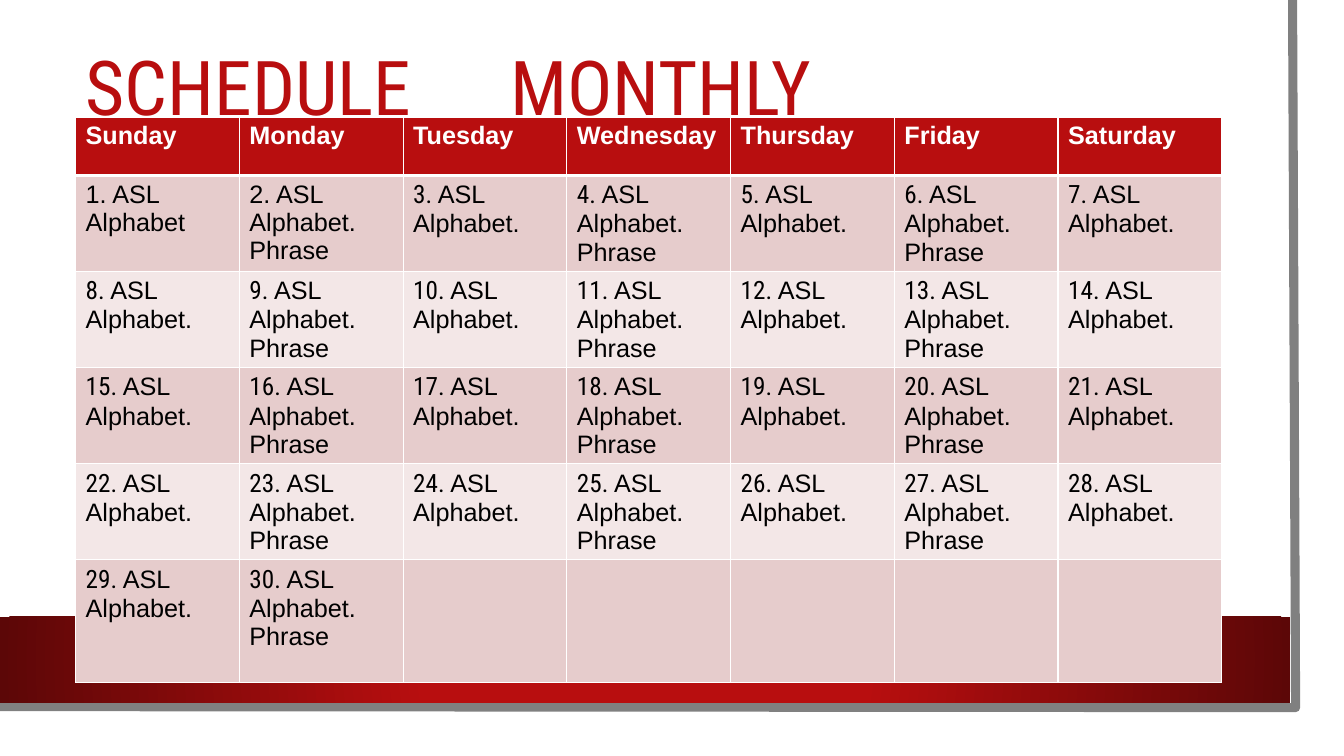
from lxml.etree import SubElement
from pptx import Presentation
from pptx.dml.color import RGBColor
from pptx.enum.shapes import MSO_SHAPE
from pptx.enum.text import MSO_ANCHOR, MSO_AUTO_SIZE, PP_ALIGN
from pptx.oxml import parse_xml
from pptx.oxml.ns import nsdecls, qn
from pptx.util import Inches, Pt

WIDTH, HEIGHT = Inches(13.33), Inches(7.5)
RED, DARK_RED, GREY, WHITE, BLACK = "B80E0F", "5C0707", "808080", "FFFFFF", "000000"
BANDS = ("E6CCCC", "F3E7E7")
SANS, CONDENSED = "Arial", "Roboto Condensed"
DAYS = ("Sunday", "Monday", "Tuesday", "Wednesday", "Thursday", "Friday", "Saturday")
WEEKS, LAST_DAY = 5, 30
PHRASE_COLUMNS = (1, 3, 5)
PHRASE_BELOW = (2, 9, 16)
TABLE_LEFT, TABLE_WIDTH = Inches(0.75), Inches(11.37)
ROW_HEIGHTS = [0.58] + [0.94] * (WEEKS - 1) + [1.22]


def color(value):
    """Turn a hex string into a colour."""
    return RGBColor.from_string(value)


def add_run(p, text, size, font, ink, bold=False):
    """Add one formatted run to a paragraph."""
    r = p.add_run()
    r.text = text
    r.font.size, r.font.name, r.font.bold = Pt(size), font, bold
    r.font.color.rgb = color(ink)


def add_page_edge(s):
    """Draw the grey edge along the right and bottom of the page."""
    edge = s.shapes.build_freeform(Inches(12.82), 0)
    corners = [(12.85, 7.02), (-0.03, 7.01)]
    edge.add_line_segments([(Inches(x), Inches(y)) for x, y in corners], close=False)
    sp = edge.convert_to_shape()
    sp.shadow.inherit = False
    sp.fill.background()
    sp.line.color.rgb = color(GREY)
    sp.line.width = Pt(6.5)


def add_band(s):
    """Draw the red band with its radial gradient."""
    sp = s.shapes.add_shape(MSO_SHAPE.RECTANGLE, 0, Inches(6.12), Inches(12.8), Inches(0.85))
    sp.shadow.inherit = False
    sp.line.fill.background()
    gradient = parse_xml(
        f'<a:gradFill {nsdecls("a")} rotWithShape="1"><a:gsLst>'
        f'<a:gs pos="34000"><a:srgbClr val="{RED}"/></a:gs>'
        f'<a:gs pos="100000"><a:srgbClr val="{DARK_RED}"/></a:gs></a:gsLst>'
        '<a:path path="circle"><a:fillToRect l="50000" t="50000" r="50000" b="50000"/>'
        '</a:path></a:gradFill>')
    sp.element.spPr.find(qn("a:prstGeom")).addnext(gradient)


def add_title(s):
    """Fill the title placeholder, with a tab between its two words."""
    sp = s.shapes.title
    sp.left, sp.top, sp.width, sp.height = TABLE_LEFT, Inches(0.27), TABLE_WIDTH, Inches(1.26)
    tf = sp.text_frame
    tf.word_wrap, tf.auto_size = True, MSO_AUTO_SIZE.NONE
    tf.vertical_anchor = MSO_ANCHOR.MIDDLE
    p = tf.paragraphs[0]
    p.alignment, p.line_spacing = PP_ALIGN.LEFT, 0.9
    tabs = SubElement(p._p.get_or_add_pPr(), qn("a:tabLst"))
    SubElement(tabs, qn("a:tab"), pos=str(Inches(4.21)), algn="l")
    add_run(p, "SCHEDULE\tMONTHLY", 54, CONDENSED, RED)
    s.shapes[-1].element.addnext(sp.element)


def style_cell(cell, fill, top=1, bottom=1):
    """Give a cell white borders and a solid fill."""
    tcPr = cell._tc.get_or_add_tcPr()
    for side, width in (("L", 1), ("R", 1), ("T", top), ("B", bottom)):
        line = SubElement(tcPr, qn(f"a:ln{side}"), w=str(Pt(width)))
        SubElement(SubElement(line, qn("a:solidFill")), qn("a:srgbClr"), val=WHITE)
    cell.fill.solid()
    cell.fill.fore_color.rgb = color(fill)


def write_day(cell, day, column):
    """Write the lesson of one day."""
    tf = cell.text_frame
    p = tf.paragraphs[0]
    add_run(p, f"{day}.", 18, SANS if day < 3 else CONDENSED, BLACK)
    has_phrase, below = column in PHRASE_COLUMNS, day in PHRASE_BELOW
    lesson = " ASL Alphabet" + ("" if day == 1 else ".")
    add_run(p, lesson + (" Phrase" if has_phrase and not below else ""), 18, SANS, BLACK)
    if below:
        add_run(tf.add_paragraph(), "Phrase", 18, SANS, BLACK)


def add_calendar(s):
    """Build the month as a table of weeks."""
    table = s.shapes.add_table(WEEKS + 1, len(DAYS), TABLE_LEFT, Inches(1.16),
                               TABLE_WIDTH, Inches(sum(ROW_HEIGHTS))).table
    for row, height in zip(table.rows, ROW_HEIGHTS):
        row.height = Inches(height)
    for column, name in enumerate(DAYS):
        header = table.cell(0, column)
        style_cell(header, RED, bottom=3)
        add_run(header.text_frame.paragraphs[0], name, 18, SANS, WHITE, True)
        for week in range(WEEKS):
            cell = table.cell(week + 1, column)
            style_cell(cell, BANDS[week % 2], top=1 if week else 3)
            day = week * len(DAYS) + column + 1
            if day <= LAST_DAY:
                write_day(cell, day, column)


def main():
    """Build and save the slide."""
    prs = Presentation()
    prs.slide_width, prs.slide_height = WIDTH, HEIGHT
    s = prs.slides.add_slide(prs.slide_layouts[5])
    add_page_edge(s)
    add_band(s)
    add_title(s)
    add_calendar(s)
    prs.save("out.pptx")


if __name__ == "__main__":
    main()
